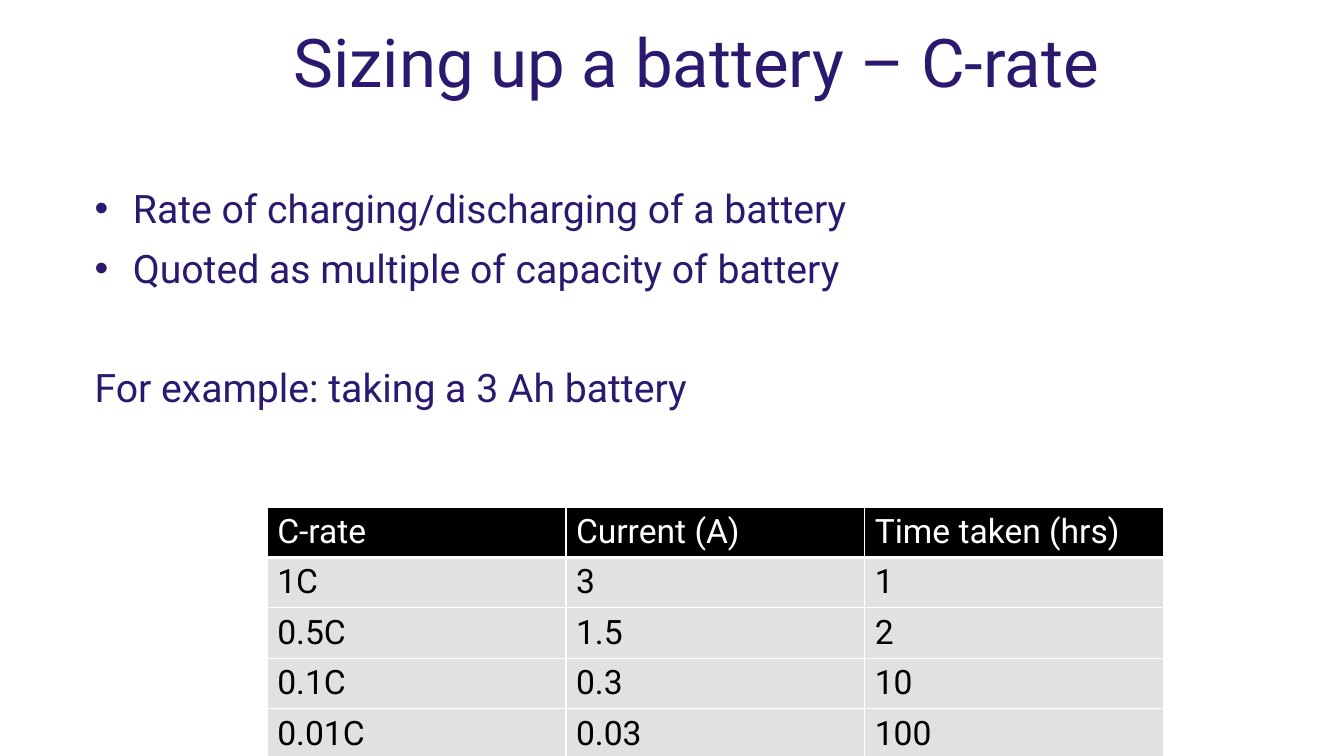
import pptx
import pptx.util
import pptx.dml.color
import pptx.enum.text
import pptx.oxml
import pptx.oxml.ns

Inches = pptx.util.Inches
Pt = pptx.util.Pt
ANCHOR = pptx.enum.text.MSO_ANCHOR

NAVY, BLACK, WHITE, GREY = "2A196F", "000000", "FFFFFF", "E1E1E1"
TITLE = "Sizing up a battery – C-rate"
POINTS = [
    ("Rate of charging/discharging of a battery", True, 0),
    ("Quoted as multiple of capacity of battery", True, 9.3),
    ("For example: taking a 3 Ah battery", False, 51.5),
]
RATES = [
    ("C-rate", "Current (A)", "Time taken (hrs)"),
    ("1C", "3", "1"),
    ("0.5C", "1.5", "2"),
    ("0.1C", "0.3", "10"),
    ("0.01C", "0.03", "100"),
]


def color(code):
    """Turn a hex string into a colour."""
    return pptx.dml.color.RGBColor.from_string(code)


def style(font, size, code):
    """Apply the slide's typeface with a size and colour."""
    for key, value in {"name": "Roboto", "size": Pt(size), "bold": False}.items():
        setattr(font, key, value)
    font.color.rgb = color(code)


def add_box(slide, place, anchor):
    """Add a wrapping text box and return its frame."""
    frame = slide.shapes.add_textbox(*map(Inches, place)).text_frame
    for key, value in {"word_wrap": True, "vertical_anchor": anchor}.items():
        setattr(frame, key, value)
    return frame


def add_title(slide):
    """Add the slide title."""
    frame = add_box(slide, (2.81, 0.25, 8.66, 0.83), ANCHOR.MIDDLE)
    para = frame.paragraphs[0]
    para.line_spacing = 0.83
    run = para.add_run()
    run.text = TITLE
    style(run.font, 48, NAVY)


def add_bullet(para):
    """Give a paragraph a hanging round bullet."""
    props = para._p.get_or_add_pPr()
    props.set("marL", str(Inches(0.38)))
    props.set("indent", str(Inches(-0.38)))
    space = pptx.oxml.ns.nsdecls("a")
    for tag in ('a:buFont {} typeface="Arial"', 'a:buChar {} char="•"'):
        props.append(pptx.oxml.parse_xml(f"<{tag.format(space)}/>"))


def add_points(slide):
    """Add the body text."""
    frame = add_box(slide, (0.84, 1.78, 12, 2.35), ANCHOR.TOP)
    for index, (text, bullet, gap) in enumerate(POINTS):
        para = frame.add_paragraph() if index else frame.paragraphs[0]
        if gap:
            para.space_before = Pt(gap)
        if bullet:
            add_bullet(para)
        run = para.add_run()
        run.text = text
        style(run.font, 28, NAVY)


def add_edges(cell, base):
    """Draw white cell borders with a given bottom width."""
    props = cell._tc.get_or_add_tcPr()
    for side, width in {"L": 1, "R": 1, "T": 1, "B": base}.items():
        props.append(pptx.oxml.parse_xml(
            f'<a:ln{side} {pptx.oxml.ns.nsdecls("a")} w="{Pt(width)}">'
            f'<a:solidFill><a:srgbClr val="{WHITE}"/></a:solidFill></a:ln{side}>'))


def fill_cell(cell, text, head):
    """Write and format one table cell."""
    add_edges(cell, 3 if head else 1)
    cell.fill.solid()
    cell.fill.fore_color.rgb = color(BLACK if head else GREY)
    run = cell.text_frame.paragraphs[0].add_run()
    run.text = text
    style(run.font, 24, WHITE if head else BLACK)


def add_rates(slide):
    """Add the table of C-rates."""
    place = map(Inches, (2.65, 5.03, 8.89, 2.03))
    table = slide.shapes.add_table(len(RATES), len(RATES[0]), *place).table
    for row, texts in enumerate(RATES):
        for col, text in enumerate(texts):
            fill_cell(table.cell(row, col), text, row == 0)


def main():
    """Build and save the slide."""
    deck = pptx.Presentation()
    deck.slide_width, deck.slide_height = Inches(13.33), Inches(7.5)
    slide = deck.slides.add_slide(deck.slide_layouts[6])
    add_title(slide)
    add_points(slide)
    add_rates(slide)
    deck.save("out.pptx")


if __name__ == "__main__":
    main()
